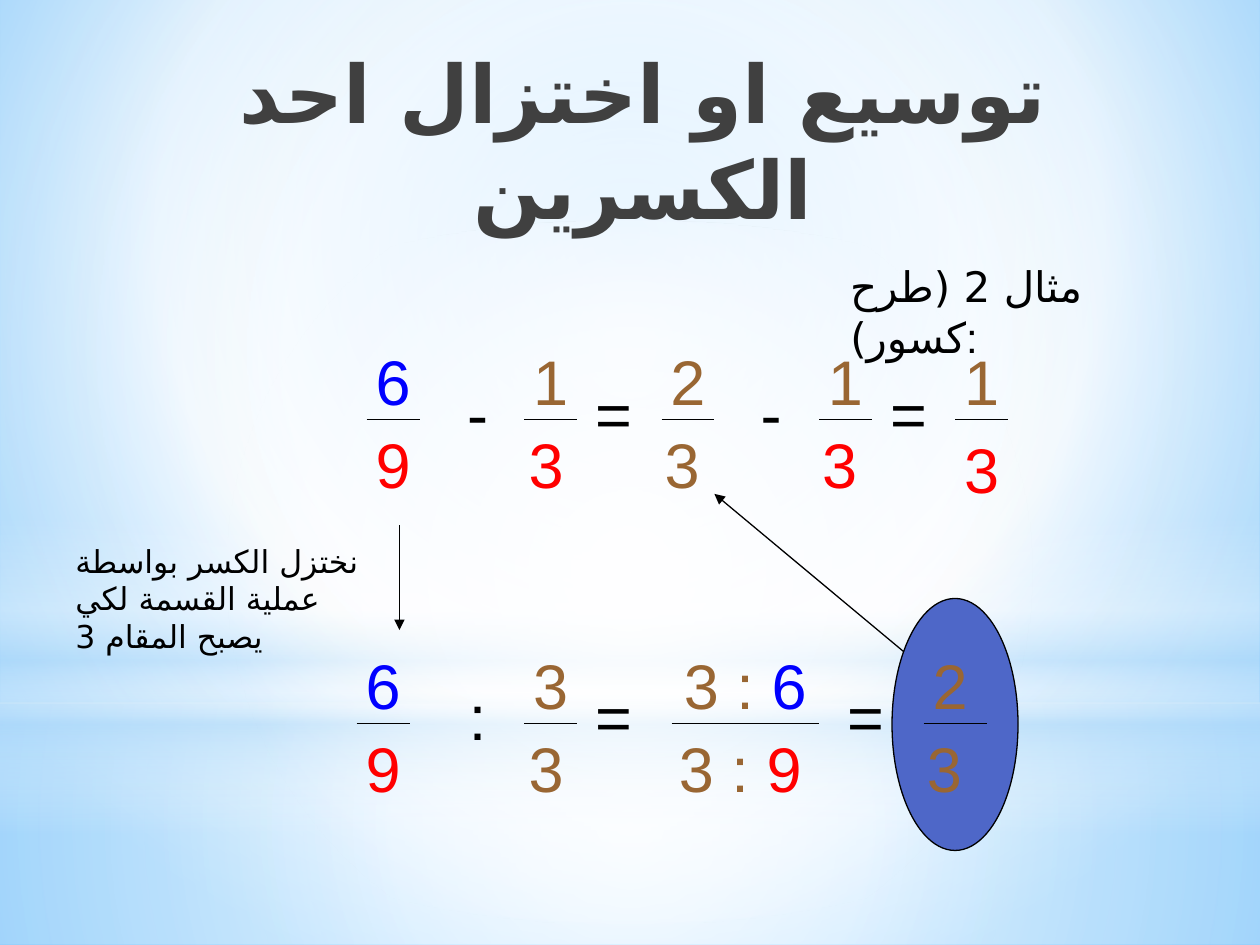
from lxml.etree import SubElement
from pptx import Presentation
from pptx.dml.color import RGBColor
from pptx.enum.shapes import MSO_CONNECTOR, MSO_SHAPE
from pptx.enum.text import MSO_AUTO_SIZE, PP_ALIGN
from pptx.oxml import parse_xml
from pptx.oxml.ns import nsdecls, qn
from pptx.util import Inches, Pt

COLORS = {
    "black": "000000", "title": "404040", "blue": "0000FF", "red": "FF0000",
    "brown": "996633", "highlight": "4E67C8", "white": "FFFFFF", "sky": "B4DCFA",
    "edge": "9ED5FF", "deep": "5BB9FF",
}
ARABIC_FONT = "DejaVu Sans"

TITLE = "توسيع او اختزال احد الكسرين"
EXAMPLE = "مثال 2 (طرح كسور):"
NOTE = "نختزل الكسر بواسطة عملية القسمة لكي يصبح المقام 3"

CENTER = (50, 50, 50, 50)
BACKDROP = [(0, "edge", 100), (60, "white", 100), (100, "deep", 100)]
LAYERS = [
    (MSO_SHAPE.RECTANGLE, (0, 5.58, 10, 1.92), CENTER,
     [(0, "white", 91), (37, "white", 76), (100, "sky", 79)]),
    (MSO_SHAPE.RECTANGLE, (0, 0, 10, 5.58), CENTER,
     [(0, "white", 89), (48, "white", 62), (100, "sky", 79)]),
    (MSO_SHAPE.RECTANGLE, (0, 4.12, 10, 2.5), None,
     [(0, "white", 0), (29, "white", 30), (45, "sky", 40),
      (55, "white", 26), (65, "sky", 60), (100, "white", 0)]),
    (MSO_SHAPE.OVAL, (0, 1.75, 10, 5.58), CENTER,
     [(0, "white", 100), (56, "white", 0)]),
]

# fraction: left, width, bar width, numerator, denominator, denominator left, its width, its drop
# operator: left, sign
EQUATIONS = [
    (2.67, [
        (2.83, 0.58, 0.42, [("6", "blue")], [("9", "red")], 2.83, 0.58, 0),
        (4.08, 0.58, 0.42, [("1", "brown")], [("3", "red")], 3.92, 0.83, 0),
        (5.17, 0.58, 0.42, [("2", "brown")], [("3", "brown")], 5, 0.83, 0),
        (6.42, 0.58, 0.42, [("1", "brown")], [("3", "red")], 6.33, 0.67, 0),
        (7.5, 0.58, 0.42, [("1", "brown")], [("3", "red")], 7.5, 0.58, 0.04),
    ], [(3.5, "-"), (4.58, "="), (5.83, "-"), (6.92, "=")]),
    (5.08, [
        (2.75, 0.58, 0.42, [("6", "blue")], [("9", "red")], 2.75, 0.58, 0),
        (4.08, 0.58, 0.42, [("3", "brown")], [("3", "brown")], 3.92, 0.83, 0),
        (5.25, 1.33, 1.17, [("3 : ", "brown"), ("6", "blue")],
         [("3 : ", "brown"), ("9", "red")], 5.04, 1.67, 0),
        (7.25, 0.58, 0.5, [("2", "brown")], [("3", "brown")], 7.08, 0.83, 0),
    ], [(3.5, ":"), (4.58, "="), (6.58, "=")]),
]
ARROWS = [((3.17, 4.17), (3.17, 5)), ((7.17, 5.17), (5.67, 3.92))]
BAR_OFFSET, OPERATOR_OFFSET, BAR_INSET, DIGIT_HEIGHT = 0.66, 0.25, 0.08, 0.7


def rgb(color):
    return RGBColor.from_string(COLORS[color])


def set_gradient(owner, fill, stops, focus):
    fill.gradient()
    stop_xml = "".join(
        f'<a:gs pos="{pos * 1000}"><a:srgbClr val="{COLORS[color]}">'
        f'<a:alpha val="{alpha * 1000}"/></a:srgbClr></a:gs>'
        for pos, color, alpha in stops)
    direction = '<a:lin ang="5400000" scaled="0"/>'
    if focus:
        left, top, right, bottom = (side * 1000 for side in focus)
        direction = (f'<a:path path="circle"><a:fillToRect l="{left}" t="{top}" '
                     f'r="{right}" b="{bottom}"/></a:path>')
    gradient = parse_xml(f'<a:gradFill {nsdecls("a")} rotWithShape="1">'
                         f'<a:gsLst>{stop_xml}</a:gsLst>{direction}</a:gradFill>')
    default = next(owner.element.iter(qn("a:gradFill")))
    default.getparent().replace(default, gradient)


def add_shape(shapes, kind, box):
    shape = shapes.add_shape(kind, *map(Inches, box))
    shape.shadow.inherit = False
    return shape


def add_text(shapes, runs, box, size=36, font="Arial", bold=False,
             align=PP_ALIGN.CENTER, grow=True):
    textbox = shapes.add_textbox(*map(Inches, box))
    frame = textbox.text_frame
    frame.word_wrap = True
    paragraph = frame.paragraphs[0]
    paragraph.alignment = align
    if grow:
        frame.auto_size = MSO_AUTO_SIZE.SHAPE_TO_FIT_TEXT
        before = SubElement(paragraph._p.get_or_add_pPr(), qn("a:spcBef"))
        SubElement(before, qn("a:spcPct"), val="50000")
    for text, color in runs:
        run = paragraph.add_run()
        run.text = text
        run.font.size = Pt(size)
        run.font.bold = bold
        run.font.color.rgb = rgb(color)
        run.font.name = font
        SubElement(run.font._element, qn("a:cs"), typeface=ARABIC_FONT)


def add_line(shapes, start, end, arrow=False):
    line = shapes.add_connector(MSO_CONNECTOR.STRAIGHT, *map(Inches, start + end))
    line.line.color.rgb = rgb("black")
    line.line.width = Pt(0.75)
    if arrow:
        SubElement(line.line._get_or_add_ln(), qn("a:tailEnd"), type="triangle")
    SubElement(line.element.spPr, qn("a:effectLst"))


def add_fraction(slide, top, left, width, bar, numerator, denominator,
                 lower_left, lower_width, drop):
    shapes = slide.shapes.add_group_shape().shapes
    bar_top = top + BAR_OFFSET
    bar_left = left + BAR_INSET
    add_text(shapes, numerator, (left, top, width, DIGIT_HEIGHT))
    add_line(shapes, (bar_left, bar_top), (bar_left + bar, bar_top))
    add_text(shapes, denominator, (lower_left, bar_top + drop, lower_width, DIGIT_HEIGHT))


def main():
    deck = Presentation()
    deck.slide_width, deck.slide_height = Inches(10), Inches(7.5)
    slide = deck.slides.add_slide(deck.slide_layouts[6])
    shapes = slide.shapes

    set_gradient(slide, slide.background.fill, BACKDROP, (20, 10, 20, 60))
    for kind, box, focus, stops in LAYERS:
        layer = add_shape(shapes, kind, box)
        layer.line.fill.background()
        set_gradient(layer, layer.fill, stops, focus)

    highlight = add_shape(shapes, MSO_SHAPE.OVAL, (7.08, 4.75, 1, 2))
    highlight.fill.solid()
    highlight.fill.fore_color.rgb = rgb("highlight")
    highlight.line.color.rgb = rgb("black")
    highlight.line.width = Pt(0.75)

    add_text(shapes, [(TITLE, "title")], (1.54, 0.29, 7.12, 1.25),
             size=46, font="Karla", bold=True, grow=False)
    add_text(shapes, [(EXAMPLE, "black")], (6.65, 2.02, 2.86, 0.5),
             size=24, align=PP_ALIGN.LEFT)
    add_text(shapes, [(NOTE, "black")], (0.5, 4.25, 2.67, 0.7),
             size=18, align=PP_ALIGN.LEFT)

    for top, fractions, operators in EQUATIONS:
        for fraction in fractions:
            add_fraction(slide, top, *fraction)
        for left, sign in operators:
            add_text(shapes, [(sign, "black")],
                     (left, top + OPERATOR_OFFSET, 0.58, DIGIT_HEIGHT))
    for start, end in ARROWS:
        add_line(shapes, start, end, arrow=True)

    deck.save("out.pptx")


if __name__ == "__main__":
    main()
